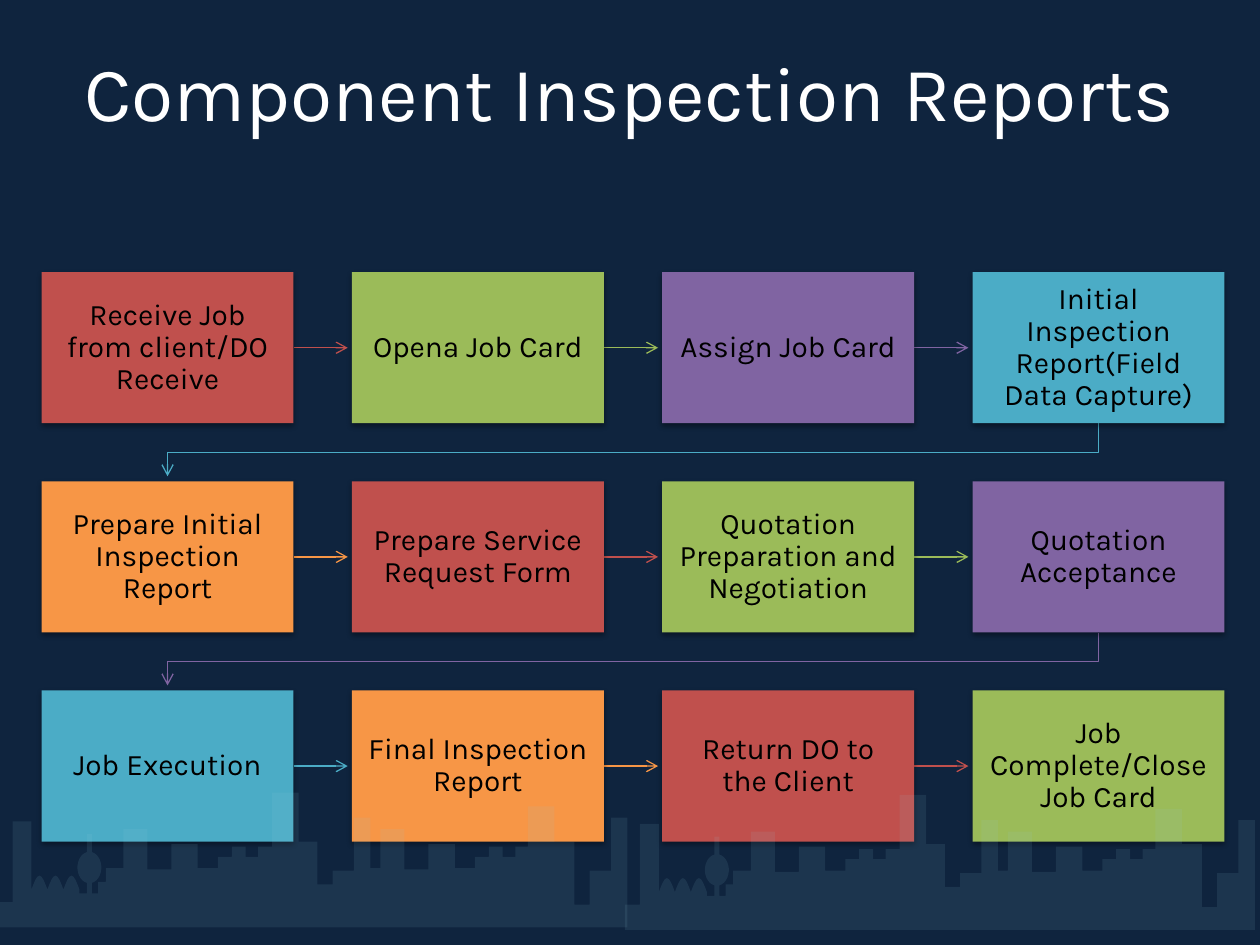
from math import cos, pi, radians, sin

from pptx import Presentation
from pptx.dml.color import RGBColor
from pptx.enum.shapes import MSO_CONNECTOR, MSO_SHAPE
from pptx.enum.text import MSO_ANCHOR, PP_ALIGN
from pptx.oxml import parse_xml
from pptx.oxml.ns import nsdecls
from pptx.util import Inches, Pt

RECT = MSO_SHAPE.RECTANGLE
STRAIGHT = MSO_CONNECTOR.STRAIGHT
TOP, MIDDLE = MSO_ANCHOR.TOP, MSO_ANCHOR.MIDDLE
CENTER = PP_ALIGN.CENTER

FONT = "Karla"
COLORS = {
    "navy": "0F243E", "white": "FFFFFF", "black": "000000",
    "red": "C0504D", "green": "9BBB59", "purple": "8064A2",
    "teal": "4BACC6", "orange": "F79646", "sky": "93CDDD",
}
CYCLE = ["red", "green", "purple", "teal", "orange"]
STEPS = [
    "Receive Job from client/DO Receive", "Opena Job Card",
    "Assign Job Card", "Initial Inspection Report(Field Data Capture)",
    "Prepare Initial Inspection Report", "Prepare Service Request Form",
    "Quotation Preparation and Negotiation", "Quotation Acceptance",
    "Job Execution", "Final Inspection Report",
    "Return DO to the Client", "Job Complete/Close Job Card",
]
COLS = 4
LEFT, UPPER = 0.33, 2.16
WIDE, HIGH = 2, 1.2
PITCH_X, PITCH_Y = 2.463, 1.66


def rgb(name):
    return RGBColor.from_string(COLORS[name])


def draw(points):
    """Add a freeform through points given in inches."""
    spots = [(Inches(x), Inches(y)) for x, y in points]
    pen = slide.shapes.build_freeform(*spots[0], scale=1.0)
    pen.add_line_segments(spots[1:], close=points[0] == points[-1])
    return pen.convert_to_shape()


prs = Presentation()
prs.slide_width, prs.slide_height = Inches(10), Inches(7.5)
slide = prs.slides.add_slide(prs.slide_layouts[5])
slide.background.fill.solid()
slide.background.fill.fore_color.rgb = rgb("navy")

title = slide.shapes.title
title.left, title.top = Inches(0.5), Inches(0.3)
title.width, title.height = Inches(9), Inches(1.25)
title.text_frame.vertical_anchor = TOP
para = title.text_frame.paragraphs[0]
para.alignment = CENTER
run = para.add_run()
run.text = "Component Inspection Reports"
run.font.name, run.font.size = FONT, Pt(44)
run.font.color.rgb = rgb("white")

# Process steps, each with an arrow to the next one
for i, step in enumerate(STEPS):
    row, col = divmod(i, COLS)
    x, y = LEFT + col * PITCH_X, UPPER + row * PITCH_Y
    color = rgb(CYCLE[i % len(CYCLE)])

    if i < len(STEPS) - 1:
        if col < COLS - 1:
            mid = y + HIGH / 2
            arrow = slide.shapes.add_connector(
                STRAIGHT, Inches(x + WIDE), Inches(mid),
                Inches(x + WIDE + 0.43), Inches(mid))
        else:
            start, end = x + WIDE / 2, LEFT + WIDE / 2
            base = y + HIGH
            arrow = draw([(start, base), (start, base + 0.23),
                          (end, base + 0.23), (end, base + 0.42)])
            arrow.fill.background()
        arrow.line.color.rgb = color
        arrow.line.width = Pt(0.75)
        props = arrow._element.spPr
        arrow.line._get_or_add_ln().append(
            parse_xml(f'<a:tailEnd {nsdecls("a")} type="arrow"/>'))
        props.append(parse_xml(f'<a:effectLst {nsdecls("a")}/>'))

    box = slide.shapes.add_shape(
        RECT, Inches(x), Inches(y), Inches(WIDE), Inches(HIGH))
    box.fill.solid()
    box.fill.fore_color.rgb = color
    box.line.fill.background()
    box._element.spPr.append(parse_xml(
        f'<a:effectLst {nsdecls("a")}><a:outerShdw blurRad="{Pt(3.1)}" '
        f'dist="{Pt(1.6)}" dir="5400000" rotWithShape="0">'
        f'<a:srgbClr val="{COLORS["black"]}"><a:alpha val="38000"/>'
        '</a:srgbClr></a:outerShdw></a:effectLst>'))
    frame = box.text_frame
    frame.word_wrap = True
    frame.vertical_anchor = MIDDLE
    frame.margin_left = frame.margin_right = Inches(0.13)
    frame.margin_top = frame.margin_bottom = Inches(0.13)
    para = frame.paragraphs[0]
    para.alignment = CENTER
    para.line_spacing = 0.9
    run = para.add_run()
    run.text = step
    run.font.name, run.font.size = FONT, Pt(17)
    run.font.color.rgb = rgb("black")

# Skyline outline: trees, round tower, then roofs as (left edge, height)
trees = [(0.25 + 0.127 * (n + k / 8), 7.06 - 0.11 * sin(pi * k / 8))
         for n in range(3) for k in range(9)]
bulb = [[(0.71 + 0.095 * cos(radians(a)), 6.885 + 0.125 * sin(radians(a)))
         for a in range(first, first + 157, 12)] for first in (102, 282)]
tower = [(0.63, 7.09), (0.69, 7.09), *bulb[0], (0.69, 6.62),
         (0.73, 6.62), *bulb[1], (0.73, 7.09)]
block = [(0.98, 6.58), (1.17, 6.9), (1.36, 6.7), (1.57, 6.89),
         (1.73, 6.8), (1.84, 6.72), (1.95, 6.8), (2.05, 6.72)]
roofs = [(0.78, 7), (0.84, 6.89), *block, (2.16, 6.29), (2.37, 6.68),
         (2.52, 7.02), (2.64, 6.91), (2.81, 6.49), (2.94, 6.89),
         *[(x + 2.04, y) for x, y in block], (4.19, 6.4), (4.4, 6.68),
         (4.56, 7.18), (4.68, 6.91), (4.85, 6.49), (4.98, 7.36)]

city = [(-0.02, 7.36), (-0.02, 7.16), (0.1, 7.16), (0.1, 6.52),
        (0.25, 6.52), *trees, *tower]
for x, y in roofs:
    city += [(x, city[-1][1]), (x, y)]
city.append(city[0])

for dx, dy in [(0, 0), (4.98, 0.02)]:
    shape = draw([(x + dx, y + dy) for x, y in city])
    shape.shadow.inherit = False
    shape.line.fill.background()
    shape.fill.solid()
    shape.fill.fore_color.rgb = rgb("sky")
    tint = shape._element.spPr.find(".//{*}srgbClr")
    tint.append(parse_xml(f'<a:alpha {nsdecls("a")} val="10000"/>'))

prs.save("out.pptx")
